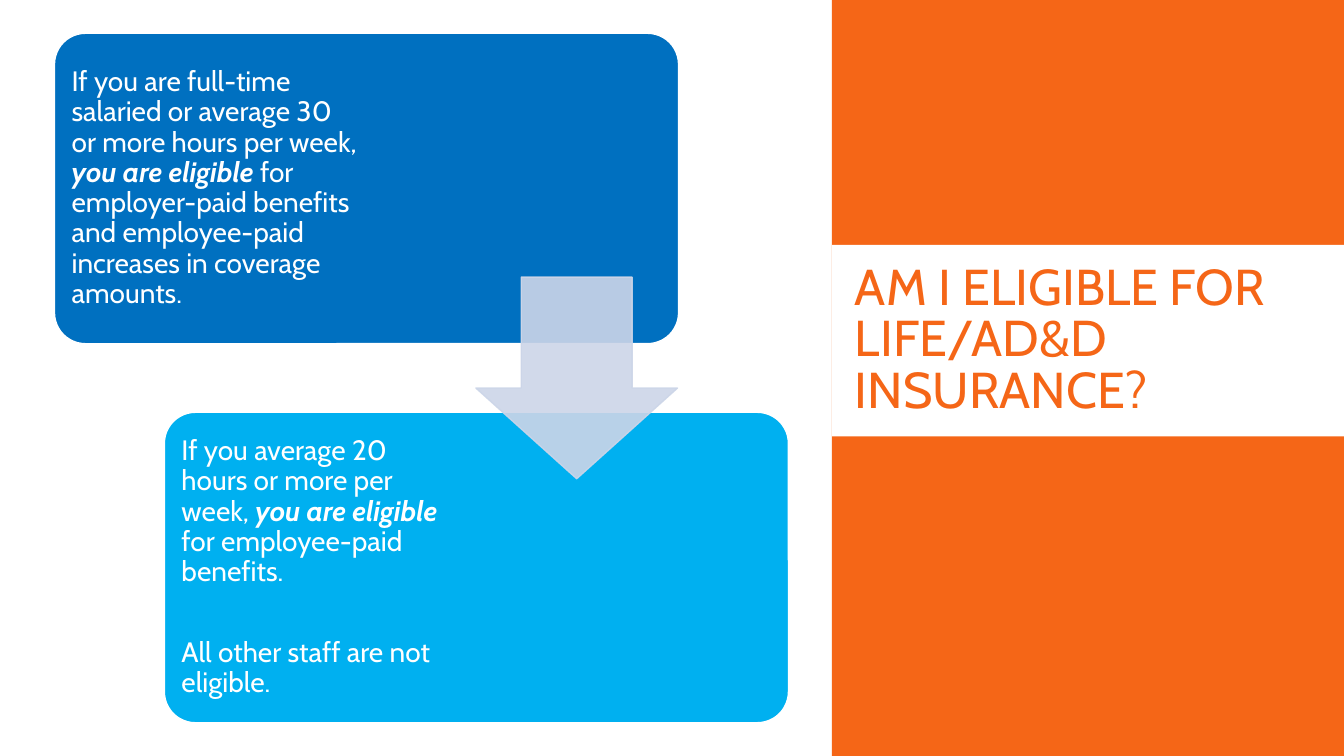
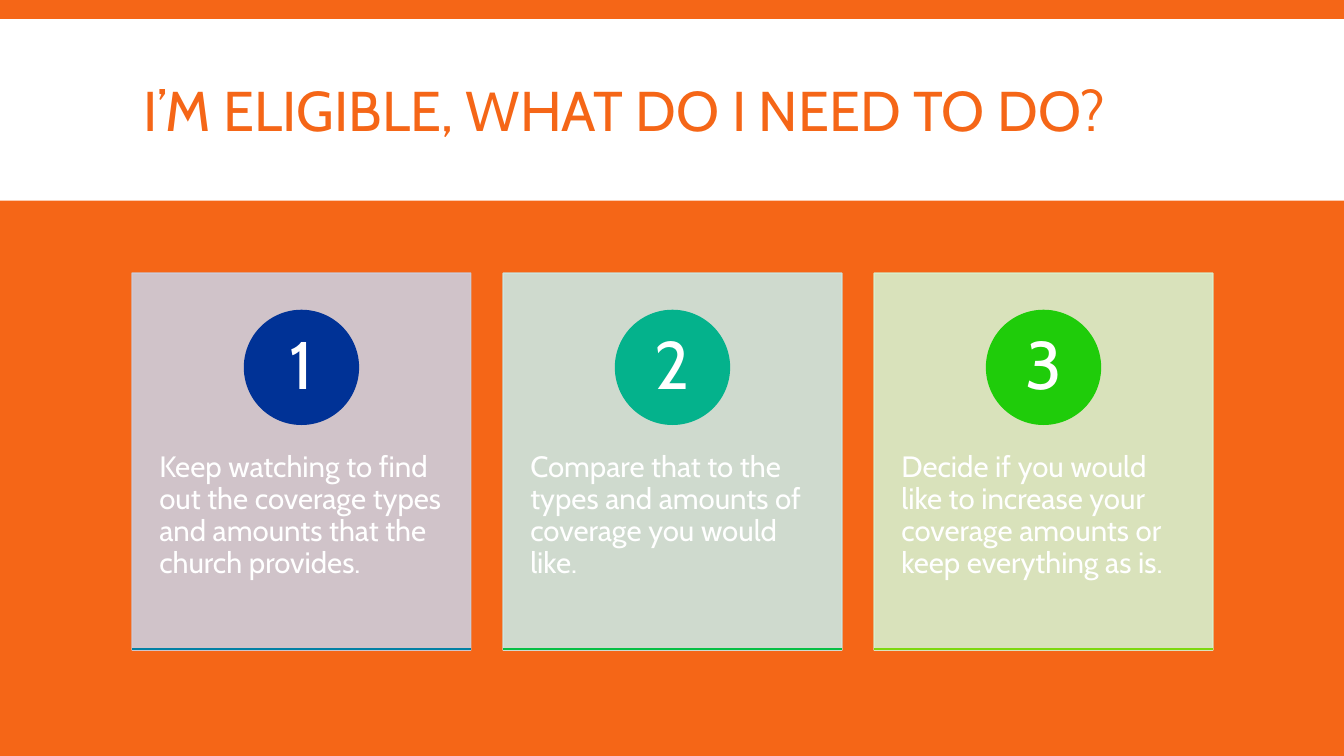
from pptx import Presentation
from pptx.dml.color import RGBColor
from pptx.enum.shapes import MSO_CONNECTOR, MSO_SHAPE
from pptx.enum.text import MSO_ANCHOR, MSO_AUTO_SIZE, PP_ALIGN
from pptx.oxml.ns import qn
from pptx.util import Inches, Pt
from lxml.etree import SubElement

# Shared look
FONT = "Cabin"
WHITE = RGBColor(0xFF, 0xFF, 0xFF)
ORANGE = RGBColor(0xF5, 0x66, 0x17)
BLUE = RGBColor(0x00, 0x70, 0xC0)
SKY = RGBColor(0x00, 0xB0, 0xF0)
PALE = RGBColor(0xCC, 0xD5, 0xE8)
LILAC = RGBColor(0xCC, 0xCE, 0xDD)
MINT = RGBColor(0xCB, 0xE7, 0xE2)
LIME = RGBColor(0xD7, 0xF0, 0xCD)
NAVY = RGBColor(0x00, 0x32, 0x96)
TEAL = RGBColor(0x04, 0xB2, 0x8C)
GREEN = RGBColor(0x1F, 0xCC, 0x0A)
RULES = [RGBColor(0x02, 0x80, 0xA4), RGBColor(0x07, 0xBF, 0x45),
         RGBColor(0x7D, 0xD8, 0x0E)]


def draw(slide, kind, box, fill, line=None, alpha=None):
    """Add a flat shape, outlined if a line colour is given."""
    shape = slide.shapes.add_shape(kind, *[Inches(v) for v in box])
    shape.shadow.inherit = False
    shape.fill.solid()
    shape.fill.fore_color.rgb = fill
    if line is None:
        shape.line.fill.background()
    else:
        shape.line.color.rgb = line
        shape.line.width = Pt(1)
    if alpha:
        for color in shape.element.spPr.iter(qn("a:srgbClr")):
            SubElement(color, qn("a:alpha")).set("val", str(alpha * 1000))
    return shape


def write(shape, paras, size, color=WHITE, pad=(0.1, 0.05, 0.1, 0.05),
          anchor=MSO_ANCHOR.MIDDLE, align=PP_ALIGN.LEFT, space=0.9, gap=0):
    """Fill a shape with paragraphs of (text, strong) runs."""
    frame = shape.text_frame
    frame.word_wrap = True
    frame.auto_size = MSO_AUTO_SIZE.NONE
    frame.vertical_anchor = anchor
    (frame.margin_left, frame.margin_top,
     frame.margin_right, frame.margin_bottom) = [Inches(v) for v in pad]
    for i, runs in enumerate(paras):
        para = frame.add_paragraph() if i else frame.paragraphs[0]
        para.alignment = align
        para.line_spacing = space
        para.space_before = Pt(gap if i else 0)
        for text, strong in runs:
            run = para.add_run()
            run.text = text
            run.font.name = FONT
            run.font.size = Pt(size)
            run.font.bold = run.font.italic = strong
            run.font.color.rgb = color


prs = Presentation()
prs.slide_width = Inches(13.33)
prs.slide_height = Inches(7.5)

# Backgrounds, bands and titles
pages = [
    (WHITE, [((8.25, 0, 5.08, 7.5), ORANGE), ((8.25, 2.43, 5.08, 1.9), WHITE)],
     "AM I ELIGIBLE FOR LIFE/AD&D INSURANCE?", (8.38, 2.56, 4.52, 1.65), 36),
    (ORANGE, [((0, 0.19, 13.33, 1.8), WHITE)],
     "I’M ELIGIBLE, WHAT DO I NEED TO DO?", (1.32, 0.31, 10.7, 1.65), 40),
]
for back, bands, text, box, size in pages:
    slide = prs.slides.add_slide(prs.slide_layouts[5])
    slide.background.fill.solid()
    slide.background.fill.fore_color.rgb = back
    for band, fill in bands:
        draw(slide, MSO_SHAPE.RECTANGLE, band, fill)
    title = slide.shapes.title
    title.left, title.top, title.width, title.height = [Inches(v) for v in box]
    write(title, [[(text, False)]], size, ORANGE, space=0.85)
    # Bring the title in front of the bands
    title.element.getparent().append(title.element)

first, second = prs.slides

# Slide 1: two rules of eligibility
rules = [
    (0.54, 0.33, BLUE, 3.09, [
        [("If you are full-time salaried or average 30 or more hours per week, ", False),
         ("you are eligible ", True),
         ("for employer-paid benefits and employee-paid increases in coverage amounts.",
          False)]]),
    (1.63, 4.09, SKY, 3.18, [
        [("If you average 20 hours or more per week, ", False),
         ("you are eligible", True),
         (" for employee-paid benefits.", False)],
        [("All other staff are not eligible.", False)]]),
]
for left, top, fill, right, paras in rules:
    panel = draw(first, MSO_SHAPE.ROUNDED_RECTANGLE, (left, top, 6.19, 3.08), fill, WHITE)
    panel.adjustments[0] = 0.1
    write(panel, paras, 20, pad=(0.08, 0.08, right, 0.08), gap=36)

arrow = draw(first, MSO_SHAPE.DOWN_ARROW, (4.72, 2.75, 2, 2), PALE, PALE, 90)
arrow.adjustments[0] = 0.55
arrow.adjustments[1] = 0.45

# Slide 2: three numbered cards
WIDE, TALL, DISC = 3.36, 3.74, 1.13
STEP = 3.68
steps = [
    ("Keep watching to find out the coverage types and amounts that the church provides.",
     LILAC, NAVY),
    ("Compare that to the types and amounts of coverage you would like.", MINT, TEAL),
    ("Decide if you would like to increase your coverage amounts or keep everything as is.",
     LIME, GREEN),
]
for i, (text, fill, dark) in enumerate(steps):
    left, top = 1.31 + i * STEP, 2.71
    card = draw(second, MSO_SHAPE.RECTANGLE, (left, top, WIDE, TALL), fill, fill, 90)
    write(card, [[(text, False)]], 21, pad=(0.27, 1.78, 0.26, 0.36),
          anchor=MSO_ANCHOR.TOP)
    disc = draw(second, MSO_SHAPE.OVAL,
                (left + (WIDE - DISC) / 2, top + 0.37, DISC, DISC), dark, dark)
    write(disc, [[(str(i + 1), False)]], 48, pad=(0.09, 0.01, 0.09, 0.01),
          align=PP_ALIGN.CENTER)
    # Rule along the foot of the card
    foot = Inches(top + TALL - 0.01)
    rule = second.shapes.add_connector(MSO_CONNECTOR.STRAIGHT, Inches(left), foot,
                                       Inches(left + WIDE), foot)
    rule.line.color.rgb = RULES[i]
    rule.line.width = Pt(1)
    SubElement(rule.element.spPr, qn("a:effectLst"))

prs.save("out.pptx")
